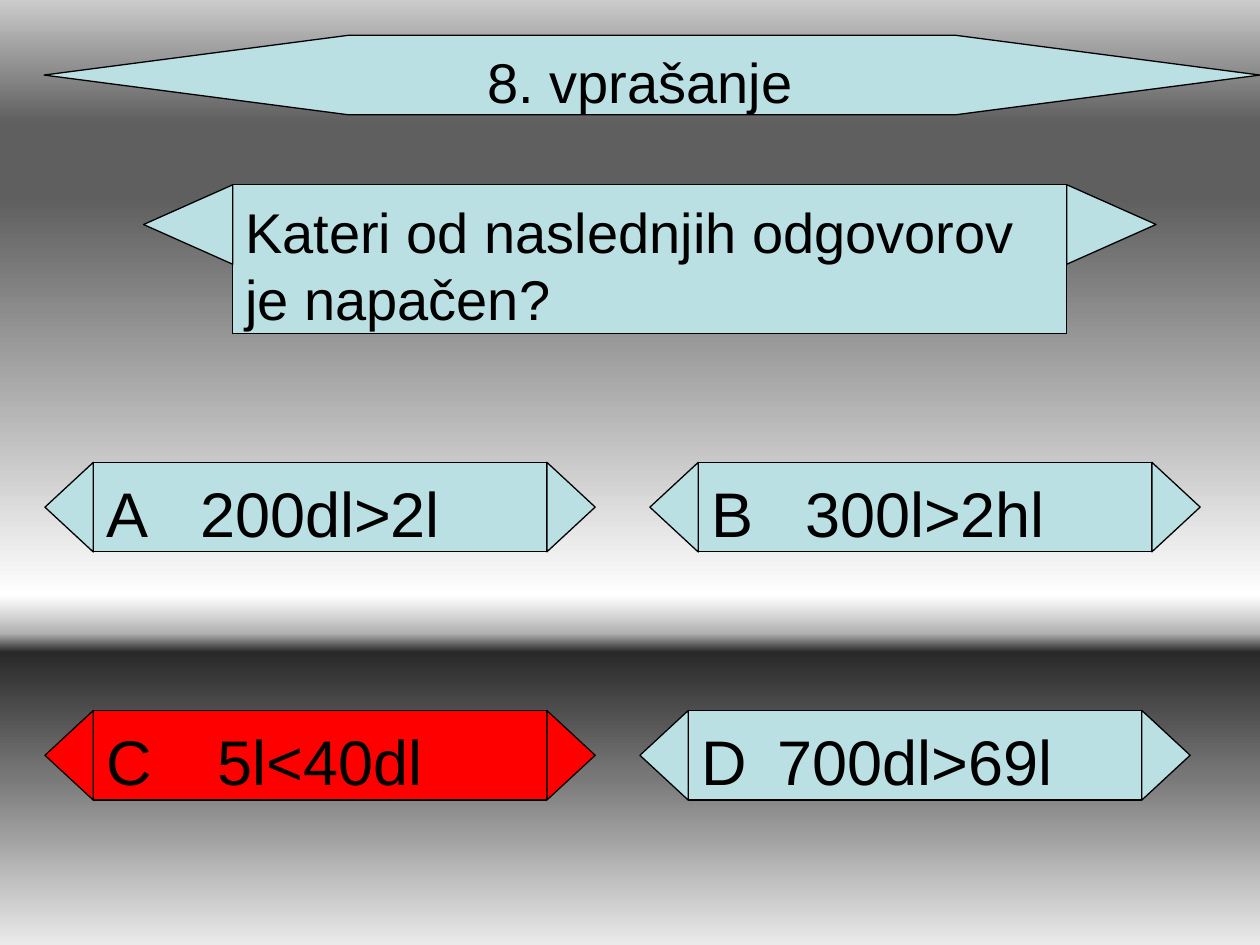
import pptx
import pptx.util
import pptx.dml.color
import pptx.enum.shapes
import pptx.enum.text
import pptx.oxml.ns
import lxml.etree

Pt = pptx.util.Pt
RGBColor = pptx.dml.color.RGBColor
MSO_SHAPE = pptx.enum.shapes.MSO_SHAPE
PP_ALIGN = pptx.enum.text.PP_ALIGN
qn = pptx.oxml.ns.qn

PALE = RGBColor(0xBB, 0xE0, 0xE3)
RED = RGBColor(0xFF, 0x00, 0x00)
BLACK = RGBColor(0x00, 0x00, 0x00)
CHROME = [
    (0, RGBColor(0xCB, 0xCB, 0xCB)), (13, RGBColor(0x5F, 0x5F, 0x5F)),
    (21, RGBColor(0x5F, 0x5F, 0x5F)), (63, RGBColor(0xFF, 0xFF, 0xFF)),
    (67, RGBColor(0xB2, 0xB2, 0xB2)), (69, RGBColor(0x29, 0x29, 0x29)),
    (82, RGBColor(0x77, 0x77, 0x77)), (100, RGBColor(0xEA, 0xEA, 0xEA)),
]


class Quiz:
    font = "Arial"
    line_width = 0.75
    text_top = 7

    def __init__(self, s):
        self.s = s

    def background(self, stops):
        fill = self.s.background.fill
        fill.gradient()
        fill.gradient_angle = 270
        gs_lst = self.s._element.find(".//" + qn("a:gsLst"))
        for gs in list(gs_lst):
            gs_lst.remove(gs)
        for percent, color in stops:
            gs = lxml.etree.SubElement(gs_lst, qn("a:gs"), pos=str(percent * 1000))
            lxml.etree.SubElement(gs, qn("a:srgbClr"), val=str(color))

    def shape(self, shapes, kind, x, y, w, h, color=PALE):
        sp = shapes.add_shape(kind, Pt(x), Pt(y), Pt(w), Pt(h))
        sp.shadow.inherit = False
        sp.fill.solid()
        sp.fill.fore_color.rgb = color
        sp.line.color.rgb = BLACK
        sp.line.width = Pt(self.line_width)
        return sp

    def set_text(self, sp, text, size, align=PP_ALIGN.LEFT):
        tf = sp.text_frame
        tf.word_wrap = True
        tf.vertical_anchor = pptx.enum.text.MSO_ANCHOR.TOP
        tf.margin_top = Pt(self.text_top)
        tf.margin_bottom = 0
        p = tf.paragraphs[0]
        p.text = text
        p.alignment = align
        p.font.name = self.font
        p.font.size = Pt(size)
        p.font.color.rgb = BLACK

    def label(self, shapes, text, x, y, w, h, size, align=PP_ALIGN.LEFT):
        sp = shapes.add_textbox(Pt(x), Pt(y), Pt(w), Pt(h))
        self.set_text(sp, text, size, align)

    def banner(self, x, y, w, h, tip_w, tip_h, text, size, align, color=PALE):
        """Draw a text box with a pointed tip at each side; return its group's shapes."""
        shapes = self.s.shapes.add_group_shape().shapes
        sp = self.shape(shapes, MSO_SHAPE.RECTANGLE, x, y, w, h, color)
        self.set_text(sp, text, size, align)
        for middle, angle in ((x + w + tip_w / 2, 90), (x - tip_w / 2, 270)):
            # The triangle turns about its centre, so its sides are swapped here.
            tip = self.shape(shapes, MSO_SHAPE.ISOSCELES_TRIANGLE, middle - tip_h / 2,
                             y + (tip_h - tip_w) / 2, tip_h, tip_w, color)
            tip.rotation = angle
        return shapes

    def title(self, text):
        y, h = 20.2, 45.4
        sp = self.shape(self.s.shapes, MSO_SHAPE.HEXAGON, 25.2, y, 694.8, h)
        sp.adjustments[0] = 3.826
        self.label(self.s.shapes, text, 195.8, y, 340, h, 32, PP_ALIGN.CENTER)

    def question(self, text):
        self.banner(133, 105.6, 476.6, 85, 51, 45.4, text, 32, PP_ALIGN.LEFT)

    def answer(self, letter, text, x, y, color=PALE):
        h = 51.2
        shapes = self.banner(x, y, 259.2, h, 27.6, h, text, 36, PP_ALIGN.CENTER, color)
        self.label(shapes, letter, x + 0.6, y, 34, h, 36)


def main():
    prs = pptx.Presentation()
    prs.slide_width, prs.slide_height = Pt(720), Pt(540)
    quiz = Quiz(prs.slides.add_slide(prs.slide_layouts[6]))
    quiz.background(CHROME)
    quiz.title("8. vprašanje")
    quiz.question("Kateri od naslednjih odgovorov je napačen?")
    left, upper, lower = 53.3, 264.2, 406
    quiz.answer("A", "200dl>2l", left, upper)
    quiz.answer("B", "300l>2hl", 399, upper)
    quiz.answer("C", "5l<40dl", left, lower, RED)
    quiz.answer("D", "700dl>69l", 393.3, lower)
    prs.save("out.pptx")


if __name__ == "__main__":
    main()
